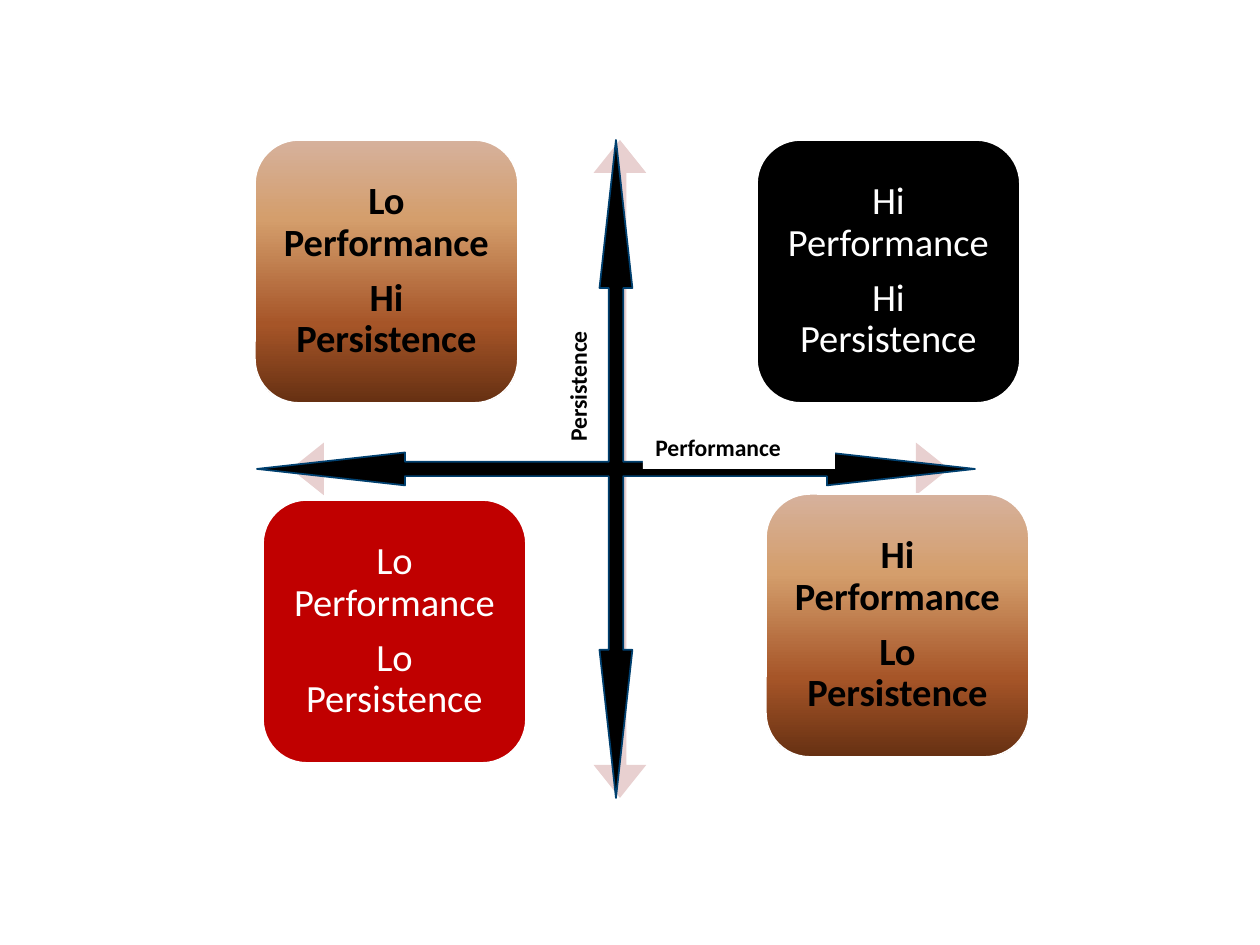
from dataclasses import dataclass

from lxml.etree import SubElement
from pptx import Presentation
from pptx.dml.color import RGBColor
from pptx.enum.shapes import MSO_SHAPE
from pptx.enum.text import MSO_ANCHOR, PP_ALIGN
from pptx.oxml.ns import qn
from pptx.util import Emu, Pt

PX = 914400 // 126


@dataclass(frozen=True)
class Theme:
    font: str = "Calibri"
    black: str = "000000"
    white: str = "FFFFFF"
    red: str = "C00000"
    pale: str = "E8D0D0"
    outline: str = "00406F"
    copper: tuple = ((0, "D6B19C"), (30, "D49E6C"), (70, "A65528"), (100, "663012"))
    card_size: float = 22
    label_size: float = 13.5
    line: float = 1


class SlideBuilder:
    def __init__(self, slide, theme):
        self.s = slide
        self.theme = theme

    def _shape(self, kind, box, fill, line=None):
        sp = self.s.shapes.add_shape(kind, *(Emu(v * PX) for v in box))
        sp.shadow.inherit = False
        if isinstance(fill, tuple):
            self._gradient(sp, fill)
        else:
            sp.fill.solid()
            sp.fill.fore_color.rgb = RGBColor.from_string(fill)
        if line:
            sp.line.color.rgb = RGBColor.from_string(line)
            sp.line.width = Pt(self.theme.line)
        else:
            sp.line.fill.background()
        return sp

    def _gradient(self, sp, stops):
        """Fill from top to bottom with (percent, colour) stops."""
        sp.fill.gradient()
        grad = sp._element.spPr.find(qn("a:gradFill"))
        for child in list(grad):
            grad.remove(child)
        gs_list = SubElement(grad, qn("a:gsLst"))
        for percent, colour in stops:
            gs = SubElement(gs_list, qn("a:gs"), pos=str(percent * 1000))
            SubElement(gs, qn("a:srgbClr"), val=colour)
        SubElement(grad, qn("a:lin"), ang="5400000", scaled="0")

    def _font(self, p, size, colour, bold):
        p.font.name = self.theme.font
        p.font.size = Pt(size)
        p.font.bold = bold
        p.font.color.rgb = RGBColor.from_string(colour)

    def cross(self, box, adjustments, fill, line=None):
        sp = self._shape(MSO_SHAPE.QUAD_ARROW, box, fill, line)
        for i, value in enumerate(adjustments):
            sp.adjustments[i] = value

    def card(self, x, y, lines, fill, colour, bold=False):
        sp = self._shape(MSO_SHAPE.ROUNDED_RECTANGLE, (x, y, 263, 263),
                         fill, self.theme.white)
        tf = sp.text_frame
        tf.word_wrap = True
        tf.vertical_anchor = MSO_ANCHOR.MIDDLE
        tf.margin_left = tf.margin_right = Emu(11 * PX)
        tf.margin_top = tf.margin_bottom = Emu(11 * PX)
        tf.text = "\n".join(lines)
        for p in tf.paragraphs:
            p.alignment = PP_ALIGN.CENTER
            p.line_spacing = 0.9
            p.space_after = Pt(7.7)
            self._font(p, self.theme.card_size, colour, bold)

    def label(self, box, text, fill=None, upward=False):
        sp = self.s.shapes.add_textbox(*(Emu(v * PX) for v in box))
        if fill:
            sp.fill.solid()
            sp.fill.fore_color.rgb = RGBColor.from_string(fill)
        tf = sp.text_frame
        tf.word_wrap = True
        if upward:
            tf._txBody.bodyPr.set("vert", "vert270")
        p = tf.paragraphs[0]
        p.text = text
        self._font(p, self.theme.label_size, self.theme.black, True)


def main():
    prs = Presentation()
    prs.slide_width, prs.slide_height = Emu(1260 * PX), Emu(945 * PX)
    theme = Theme()
    b = SlideBuilder(prs.slides.add_slide(prs.slide_layouts[6]), theme)

    b.cross((291, 140, 658, 658), (0.02, 0.04, 0.05), theme.pale)
    mixed = (theme.copper, theme.black, True)
    b.card(255, 140, ("Lo Performance", "Hi Persistence"), *mixed)
    b.card(757, 140, ("Hi Performance", "Hi Persistence"), theme.black, theme.white)
    b.card(263, 500, ("Lo Performance", "Lo Persistence"), theme.red, theme.white)
    b.card(766, 494, ("Hi Performance", "Lo Persistence"), *mixed)
    b.cross((257, 140, 718, 658), (0.022, 0.025, 0.225), theme.black, theme.outline)
    b.label((643, 427, 192, 42), "Performance", fill=theme.white)
    b.label((557, 300, 54, 154), "Persistence", upward=True)

    prs.save("out.pptx")


if __name__ == "__main__":
    main()
